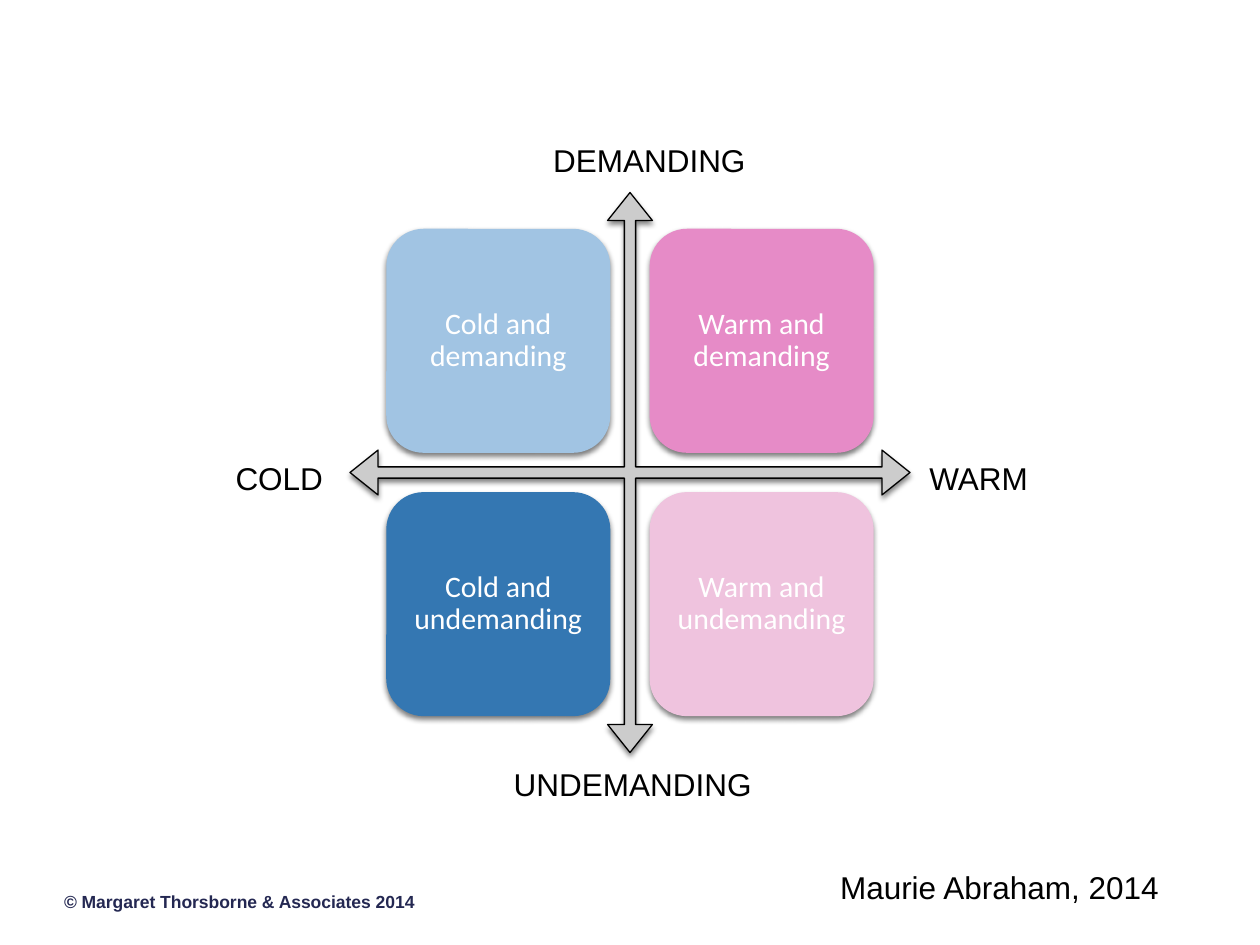
from dataclasses import dataclass

from lxml.etree import SubElement
from pptx import Presentation
from pptx.dml.color import RGBColor
from pptx.enum.shapes import MSO_SHAPE as Shape
from pptx.enum.text import MSO_ANCHOR as Anchor, PP_ALIGN as Align
from pptx.oxml.ns import qn
from pptx.util import Pt


@dataclass(frozen=True)
class Theme:
    """Colours, fonts and type sizes of the slide."""
    black: str = "000000"
    white: str = "FFFFFF"
    navy: str = "242852"
    axis: str = "CCCCCC"
    pale_blue: str = "A1C4E3"
    deep_blue: str = "3477B2"
    deep_pink: str = "E68BC7"
    pale_pink: str = "EFC3DE"
    label_font: str = "Arial"
    card_font: str = "Calibri"
    label_size: int = 18
    card_size: int = 17
    footer_size: int = 10


THEME = Theme()
CENTRE_X, CENTRE_Y = 360, 270
AXIS_SIZE = 320
CARD_SIZE, CARD_GAP = 128, 22.5


def add_span(para, text, font, size, color, bold=False):
    """Append one styled run to a paragraph."""
    span = para.add_run()
    span.text = text
    span.font.name = font
    span.font.size = Pt(size)
    span.font.bold = bold
    span.font.color.rgb = RGBColor.from_string(color)


def add_shadow(shape):
    """Give a shape a soft shadow straight below it."""
    shape.shadow.inherit = False
    effects = shape._element.spPr.find(qn("a:effectLst"))
    shadow = SubElement(effects, qn("a:outerShdw"), blurRad=str(Pt(3)), dist=str(Pt(2)),
                        dir="5400000", rotWithShape="0")
    color = SubElement(shadow, qn("a:srgbClr"), val=THEME.black)
    SubElement(color, qn("a:alpha"), val="50000")


def add_solid(page, kind, left, top, size, color):
    """Add a square filled shape with a shadow."""
    shape = page.shapes.add_shape(kind, Pt(left), Pt(top), Pt(size), Pt(size))
    shape.fill.solid()
    shape.fill.fore_color.rgb = RGBColor.from_string(color)
    add_shadow(shape)
    return shape


def add_axes(page):
    """Add the four-way arrow that forms both axes."""
    axes = add_solid(page, Shape.QUAD_ARROW, CENTRE_X - AXIS_SIZE / 2,
                     CENTRE_Y - AXIS_SIZE / 2, AXIS_SIZE, THEME.axis)
    for index, value in enumerate((0.02, 0.04, 0.05)):
        axes.adjustments[index] = value
    axes.line.color.rgb = RGBColor.from_string(THEME.black)
    axes.line.width = Pt(0.75)


def add_card(page, column, row, text, color):
    """Add one quadrant card at its place in the grid."""
    pitch = CARD_SIZE + CARD_GAP
    left = CENTRE_X - CARD_GAP / 2 - CARD_SIZE + column * pitch
    top = CENTRE_Y - CARD_GAP / 2 - CARD_SIZE + row * pitch
    card = add_solid(page, Shape.ROUNDED_RECTANGLE, left, top, CARD_SIZE, color)
    card.line.fill.background()
    frame = card.text_frame
    frame.word_wrap = True
    frame.vertical_anchor = Anchor.MIDDLE
    frame.margin_left = frame.margin_right = Pt(5)
    frame.margin_top = frame.margin_bottom = Pt(5)
    para = frame.paragraphs[0]
    para.alignment = Align.CENTER
    para.line_spacing = 0.9
    add_span(para, text, THEME.card_font, THEME.card_size, THEME.white)


def add_text(page, left, top, width):
    """Add an empty one-line text box and return its frame."""
    box = page.shapes.add_textbox(Pt(left), Pt(top), Pt(width), Pt(29))
    return box.text_frame


def add_label(page, left, top, width, text):
    """Add a plain label that keeps to one line."""
    frame = add_text(page, left, top, width)
    frame.word_wrap = False
    add_span(frame.paragraphs[0], text, THEME.label_font, THEME.label_size, THEME.black)


def add_footer(page, text):
    """Add the copyright line."""
    frame = add_text(page, 29.5, 500.5, 228)
    frame.word_wrap = True
    frame.vertical_anchor = Anchor.MIDDLE
    add_span(frame.paragraphs[0], text, THEME.label_font, THEME.footer_size, THEME.navy, True)


def main():
    """Build the slide and save it."""
    deck = Presentation()
    deck.slide_width, deck.slide_height = Pt(720), Pt(540)
    page = deck.slides.add_slide(deck.slide_layouts[6])
    add_footer(page, "© Margaret Thorsborne & Associates 2014")
    add_axes(page)
    cards = (
        (0, 0, "Cold and demanding", THEME.pale_blue),
        (1, 0, "Warm and demanding", THEME.deep_pink),
        (0, 1, "Cold and undemanding", THEME.deep_blue),
        (1, 1, "Warm and undemanding", THEME.pale_pink),
    )
    for card in cards:
        add_card(page, *card)
    labels = (
        (309, 77, 125, "DEMANDING"),
        (286.5, 433.5, 152, "UNDEMANDING"),
        (524, 258.5, 71, "WARM"),
        (127.5, 258.5, 65, "COLD"),
        (473, 492.5, 199, "Maurie Abraham, 2014"),
    )
    for label in labels:
        add_label(page, *label)
    deck.save("out.pptx")


if __name__ == "__main__":
    main()
